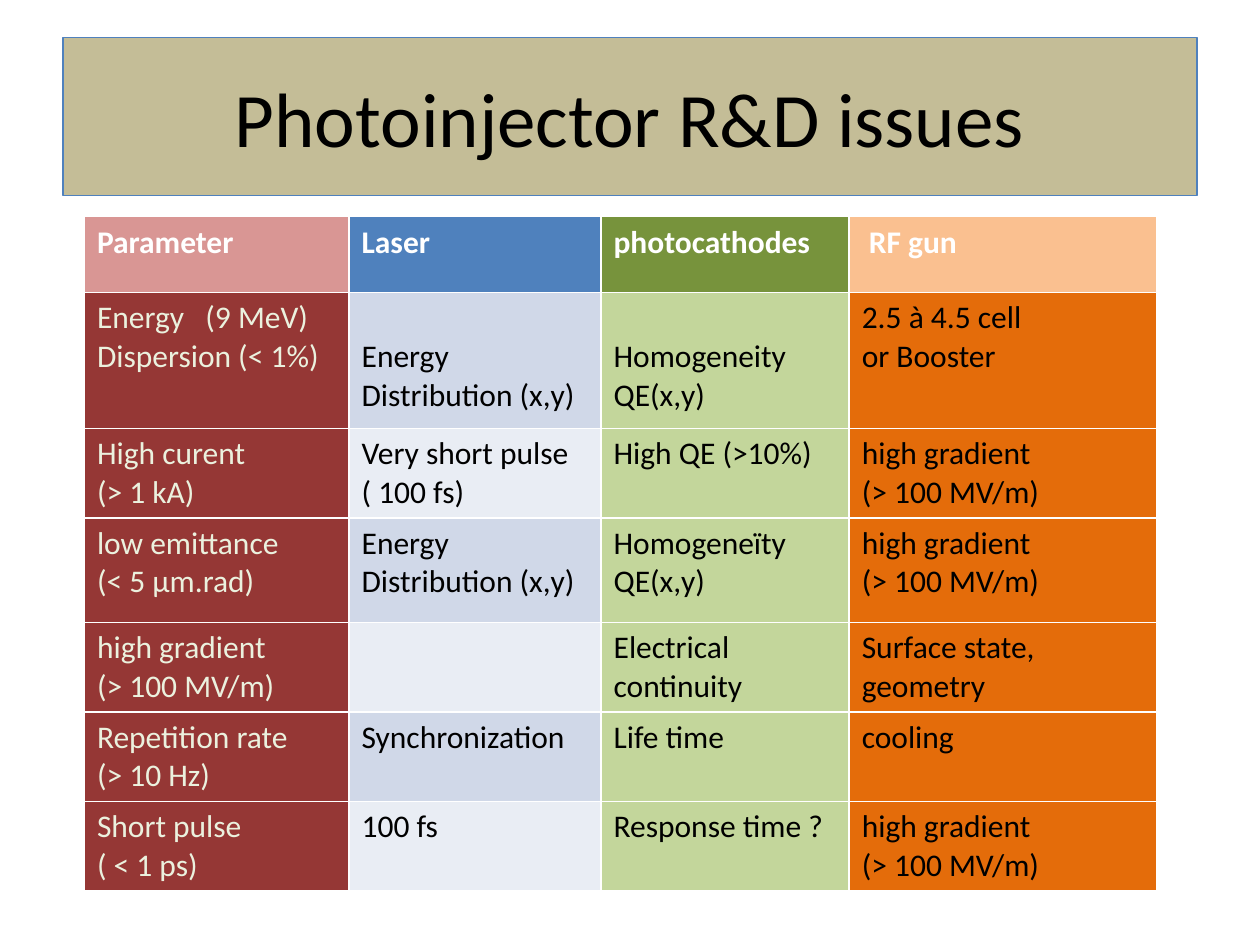
from pptx import Presentation
from pptx.dml.color import RGBColor as RGB
from pptx.enum.text import MSO_ANCHOR as Anchor, PP_ALIGN as Align
from pptx.util import Pt

SCALE = 9144  # EMU per px, 100 px to the inch
FONT = "Calibri"

BLACK = RGB(0x00, 0x00, 0x00)
WHITE = RGB(0xFF, 0xFF, 0xFF)
BLUE = RGB(0x4F, 0x81, 0xBD)
TAN = RGB(0xC4, 0xBD, 0x97)
PINK = RGB(0xD9, 0x96, 0x94)
OLIVE = RGB(0x77, 0x93, 0x3C)
PEACH = RGB(0xFA, 0xC0, 0x90)
MAROON = RGB(0x95, 0x37, 0x35)
CREAM = RGB(0xEB, 0xF1, 0xDE)
LIGHT = RGB(0xD0, 0xD8, 0xE8)
PALE = RGB(0xE9, 0xED, 0xF4)
GREEN = RGB(0xC3, 0xD6, 0x9B)
ORANGE = RGB(0xE4, 0x6C, 0x0A)

GRAD = "high gradient\n(> 100 MV/m)"
ISSUES = [
    ["Parameter", "Laser", "photocathodes", " RF gun"],
    ["Energy   (9 MeV)\nDispersion (< 1%)", "Energy Distribution (x,y)",
     "Homogeneity\nQE(x,y)", "2.5 à 4.5 cell\nor Booster"],
    ["High curent\n(> 1 kA)", "Very short pulse\n( 100 fs)",
     "High QE (>10%)", GRAD],
    ["low emittance\n(< 5 µm.rad)", "Energy Distribution (x,y)",
     "Homogeneïty\nQE(x,y)", GRAD],
    [GRAD, "", "Electrical continuity", "Surface state, geometry"],
    ["Repetition rate\n(> 10 Hz)", "Synchronization", "Life time", "cooling"],
    ["Short pulse\n( < 1 ps)", "100 fs", "Response time ?", GRAD],
]
WIDTHS = [210, 200, 197, 244]
HEIGHTS = [60, 108, 70, 83, 70, 70, 70]
HEADS = [PINK, BLUE, OLIVE, PEACH]
# Each column's fills alternate down the rows, as do the laser bands
BODIES = [(MAROON, MAROON), (LIGHT, PALE), (GREEN, GREEN), (ORANGE, ORANGE)]
# Cells whose text starts one line lower
LOWER = {(1, 1), (1, 2)}


def px(n):
    return n * SCALE


class Deck:
    def __init__(self, wide, high):
        self.prs = Presentation()
        self.prs.slide_width, self.prs.slide_height = px(wide), px(high)
        self.slide = self.prs.slides.add_slide(self.prs.slide_layouts[5])

    def style(self, frame, size, color, bold=False, align=Align.LEFT):
        for para in frame.paragraphs:
            para.alignment = align
            for run in para.runs:
                font = run.font
                font.name, font.size, font.bold = FONT, Pt(size), bold
                font.color.rgb = color

    def title(self, text, x, y, w, h):
        box = self.slide.shapes.title
        box.left, box.top, box.width, box.height = map(px, (x, y, w, h))
        box.fill.solid()
        box.fill.fore_color.rgb = TAN
        box.line.color.rgb = BLUE
        box.line.width = Pt(0.75)
        frame = box.text_frame
        frame.text = text
        frame.vertical_anchor = Anchor.MIDDLE
        self.style(frame, 44, BLACK, align=Align.CENTER)

    def cell(self, cell, text, fill, color, bold):
        cell.fill.solid()
        cell.fill.fore_color.rgb = fill
        cell.text_frame.text = text
        self.style(cell.text_frame, 18, color, bold)

    def table(self, rows, x, y):
        size = px(sum(WIDTHS)), px(sum(HEIGHTS))
        grid = self.slide.shapes.add_table(
            len(rows), len(WIDTHS), px(x), px(y), *size).table
        for col, w in zip(grid.columns, WIDTHS):
            col.width = px(w)
        for r, (row, h) in enumerate(zip(rows, HEIGHTS)):
            grid.rows[r].height = px(h)
            for c, text in enumerate(row):
                cell = grid.cell(r, c)
                if r == 0:
                    self.cell(cell, text, HEADS[c], WHITE, True)
                else:
                    color = CREAM if c == 0 else BLACK
                    self.cell(cell, text, BODIES[c][(r - 1) % 2], color, False)
                if (r, c) in LOWER:
                    cell.margin_top = px(36)
                if not text:
                    cell.text_frame.paragraphs[0].font.size = Pt(18)

    def save(self):
        self.prs.save("out.pptx")


def main():
    deck = Deck(1000, 750)
    # Title banner
    deck.title("Photoinjector R&D issues", 50, 30, 900, 125)
    # Issues by parameter and component
    deck.table(ISSUES, 67, 172)
    deck.save()


if __name__ == "__main__":
    main()
